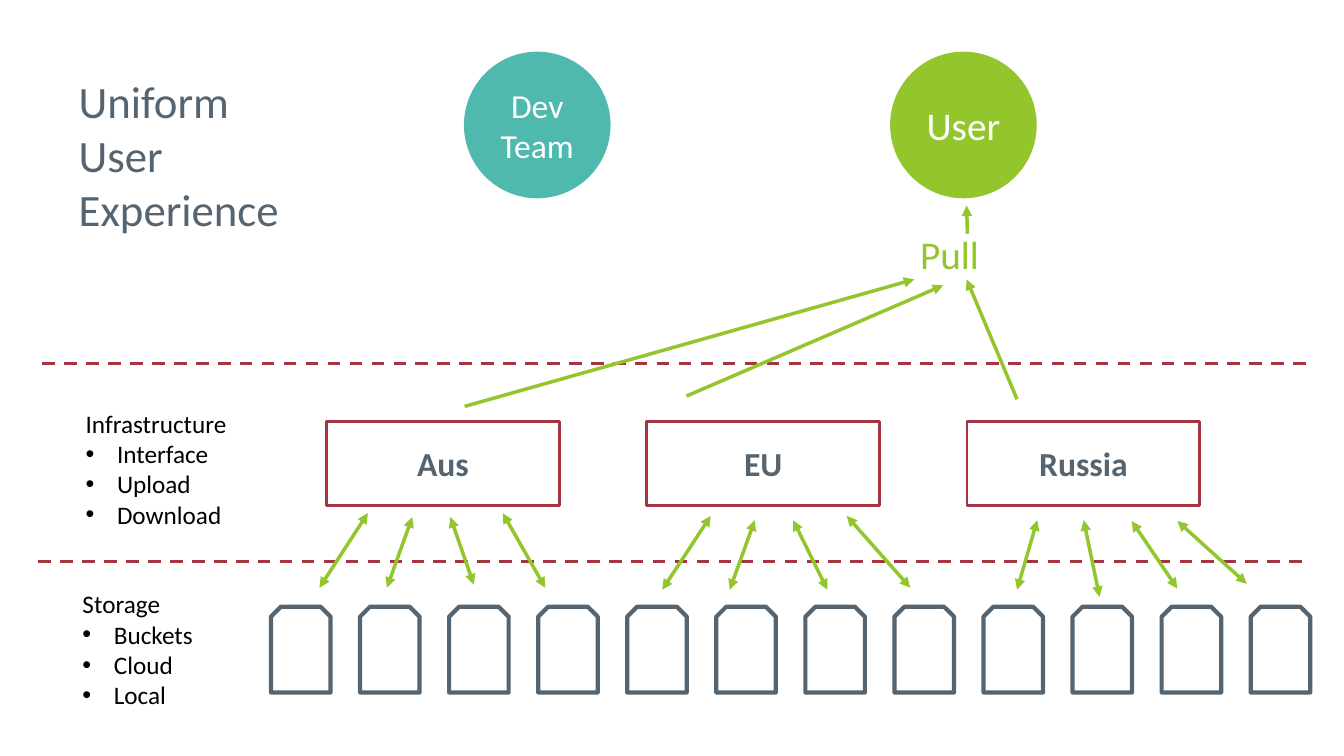
from lxml import etree
from pptx import Presentation
from pptx import util as u
from pptx.dml.color import RGBColor
from pptx.enum import dml, shapes, text
from pptx.oxml.ns import qn

COLORS = {
    "white": "FFFFFF",
    "black": "000000",
    "slate": "556471",
    "teal": "50B9AE",
    "green": "93C62D",
    "red": "A43441",
}


class Board:
    font = "Calibri"

    def __init__(self, slide):
        self.s = slide

    def color(self, name):
        return RGBColor.from_string(COLORS[name])

    def box(self, left, top, width, height):
        return [u.Cm(v) for v in (left, top, width, height)]

    def add_lines(self, tf, lines, size, color, align, bold=False, bullets=False):
        for i, line in enumerate(lines):
            p = tf.paragraphs[0] if i == 0 else tf.add_paragraph()
            p.alignment = align
            r = p.add_run()
            r.text = line
            r.font.name = self.font
            r.font.size = u.Pt(size)
            r.font.bold = bold
            r.font.color.rgb = self.color(color)
            if bullets and i > 0:
                pPr = p._p.get_or_add_pPr()
                pPr.set("marL", str(u.Cm(0.79)))
                pPr.set("indent", str(u.Cm(-0.79)))
                etree.SubElement(pPr, qn("a:buFont")).set("typeface", "Arial")
                etree.SubElement(pPr, qn("a:buChar")).set("char", "•")

    def title(self, lines, place, size, color):
        sp = self.s.shapes.title
        sp.left, sp.top, sp.width, sp.height = self.box(*place)
        tf = sp.text_frame
        tf.word_wrap = True
        tf.auto_size = text.MSO_AUTO_SIZE.NONE
        tf.vertical_anchor = text.MSO_ANCHOR.TOP
        self.add_lines(tf, lines, size, color, text.PP_ALIGN.LEFT)

    def shape(self, kind, place, fill, line, weight, label="", size=24,
              color="white", bold=False):
        sp = self.s.shapes.add_shape(kind, *self.box(*place))
        sp.shadow.inherit = False
        sp.fill.solid()
        sp.fill.fore_color.rgb = self.color(fill)
        sp.line.color.rgb = self.color(line)
        sp.line.width = u.Pt(weight)
        if label:
            tf = sp.text_frame
            tf.vertical_anchor = text.MSO_ANCHOR.MIDDLE
            self.add_lines(tf, [label], size, color, text.PP_ALIGN.CENTER, bold)

    def label(self, lines, place, size, color, bullets=False):
        tf = self.s.shapes.add_textbox(*self.box(*place)).text_frame
        tf.word_wrap = False
        tf.auto_size = text.MSO_AUTO_SIZE.SHAPE_TO_FIT_TEXT
        self.add_lines(tf, lines, size, color, text.PP_ALIGN.LEFT, bullets=bullets)

    def line(self, ends, color, weight, arrows=(), dash=None):
        sp = self.s.shapes.add_connector(
            shapes.MSO_CONNECTOR.STRAIGHT, *[u.Cm(v) for v in ends])
        sp.line.color.rgb = self.color(color)
        sp.line.width = u.Pt(weight)
        if dash:
            sp.line.dash_style = dash
        ln = sp._element.spPr.find(qn("a:ln"))
        for end in arrows:
            etree.SubElement(ln, qn(f"a:{end}")).set("type", "triangle")
        etree.SubElement(sp._element.spPr, qn("a:effectLst"))


def main():
    prs = Presentation()
    prs.slide_width, prs.slide_height = u.Cm(33.87), u.Cm(19.05)
    board = Board(prs.slides.add_slide(prs.slide_layouts[5]))
    kinds = shapes.MSO_SHAPE

    board.title(["Uniform", "User", "Experience"], (1.73, 1.73, 7.98, 4.37), 32, "slate")

    for name, left, color, size in (("Dev Team", 11.71, "teal", 24),
                                    ("User", 22.45, "green", 28)):
        board.shape(kinds.OVAL, (left, 1.32, 3.66, 3.66), color, color, 1, name, size)

    for i, region in enumerate(("Aus", "EU", "Russia")):
        board.shape(kinds.RECTANGLE, (8.23 + 8.07 * i, 10.62, 5.87, 2.11),
                    "white", "red", 2, region, 24, "slate", True)

    bucket_count, first_left, last_left = 12, 6.83, 31.52
    pitch = (last_left - first_left) / (bucket_count - 1)
    for i in range(bucket_count):
        board.shape(kinds.SNIP_2_SAME_RECTANGLE,
                    (first_left + pitch * i, 15.29, 1.5, 2.16), "white", "slate", 3)

    for left, y in ((1.07, 9.17), (0.97, 14.15)):
        board.line((left, y, left + 31.95, y), "red", 2.25, dash=dml.MSO_LINE.DASH)

    board.label(["Infrastructure", "Interface", "Upload", "Download"],
                (1.91, 10.16, 4.09, 3.33), 18, "black", True)
    board.label(["Storage", "Buckets", "Cloud", "Local"],
                (1.83, 14.71, 3.33, 3.33), 18, "black", True)

    bucket_links = (
        (9.27, 12.93, 8.05, 14.81), (10.39, 13.03, 9.75, 14.81),
        (11.35, 13.03, 11.94, 14.73), (12.67, 12.93, 13.74, 14.81),
        (17.91, 13, 16.69, 14.86), (19.02, 13.11, 18.39, 14.86),
        (19.99, 13.11, 20.85, 14.86), (21.34, 13, 22.94, 14.81),
        (26.14, 13.11, 25.63, 14.86), (27.31, 13.11, 27.71, 15.04),
        (28.52, 13.13, 29.67, 14.83), (29.67, 13.13, 31.42, 14.71),
    )
    for ends in bucket_links:
        board.line(ends, "green", 2.5, ("headEnd", "tailEnd"))

    board.label(["Pull"], (22.94, 5.69, 2.01, 1.45), 28, "green")
    pull_links = (
        (23.04, 7.04, 11.71, 10.24), (23.77, 7.19, 17.3, 9.98),
        (24.36, 7.04, 25.63, 10.06), (24.36, 5.18, 24.38, 5.89),
    )
    for ends in pull_links:
        board.line(ends, "green", 2.5, ("headEnd",))

    prs.save("out.pptx")


if __name__ == "__main__":
    main()
